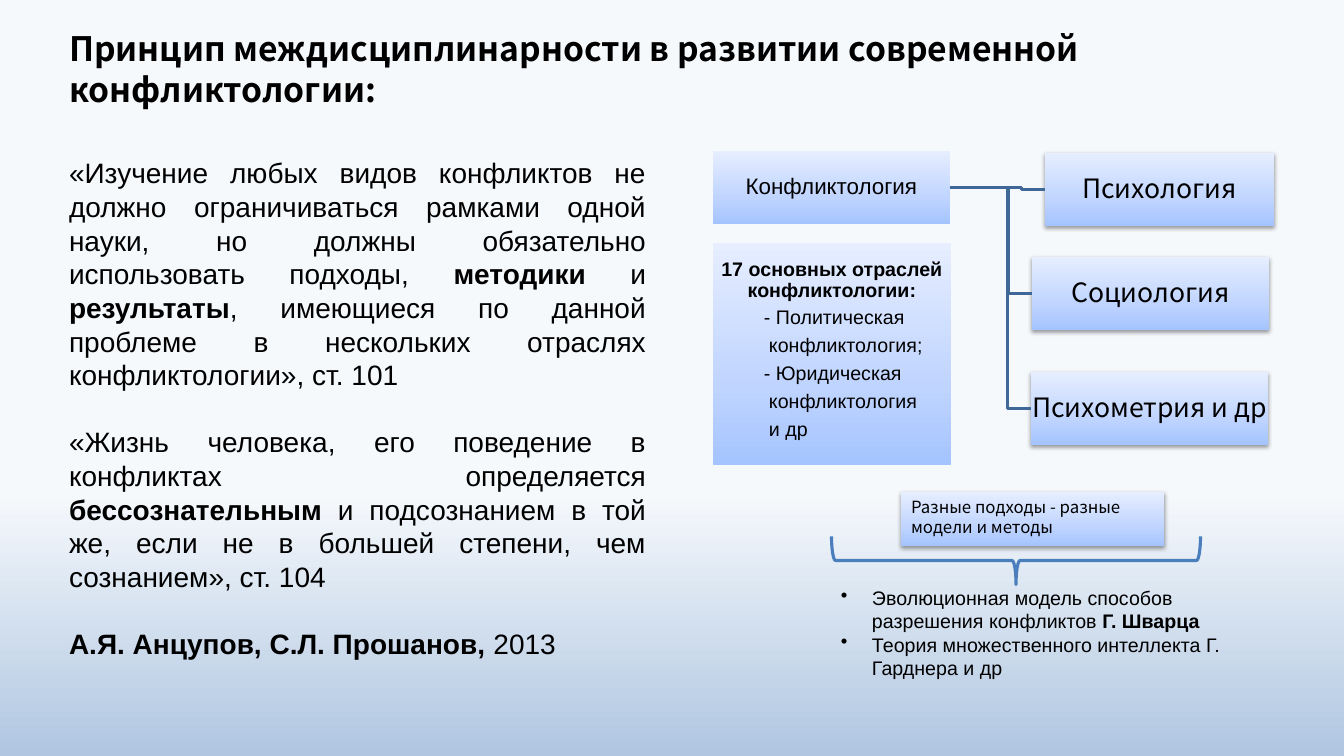
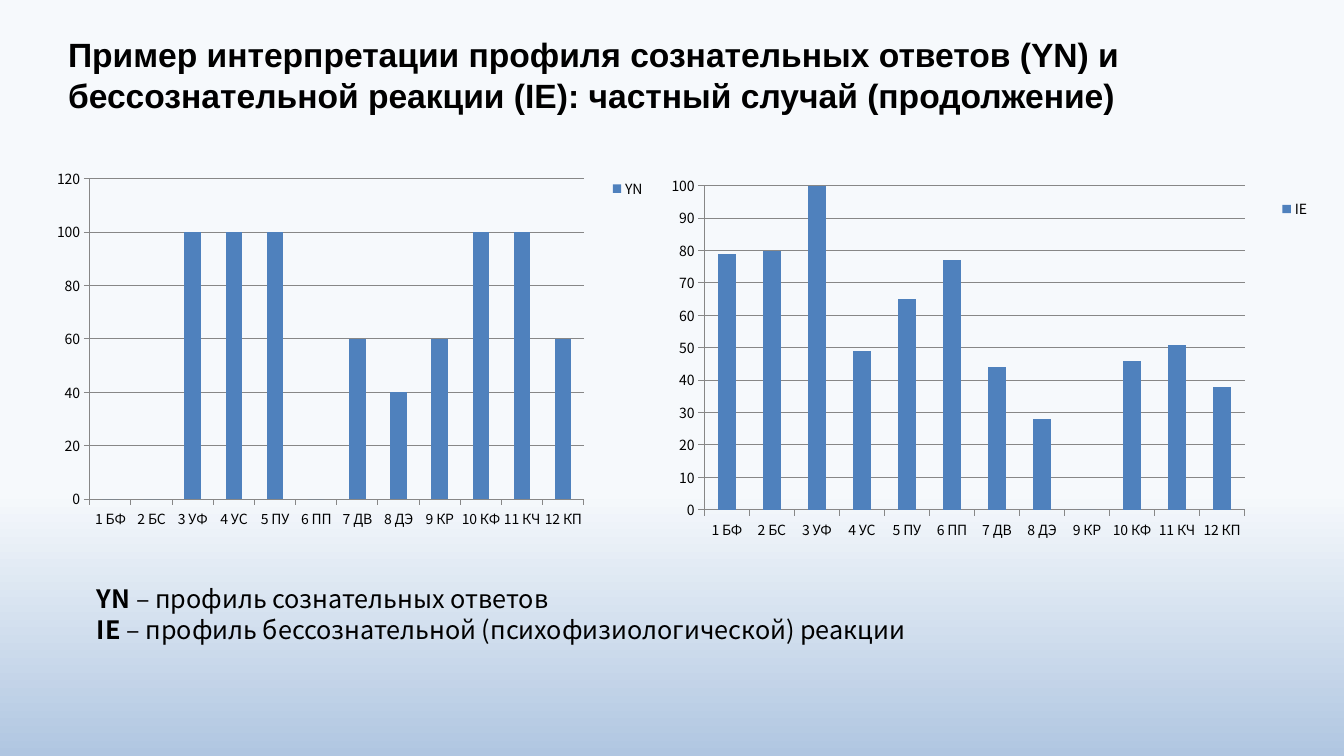
import pptx
import pptx.chart.data
import pptx.dml.color
import pptx.enum.chart
import pptx.enum.shapes
import pptx.enum.text
import pptx.oxml
import pptx.oxml.ns
import pptx.util

ARIAL = "Arial"
NOTO = "Noto Sans CJK KR"
COLORS = {
    "text": "000000", "sky": "F6F9FC", "haze": "B0C6E1",
    "box_dark": "A4C4FF", "box_mid": "BFD4FF", "box_light": "E6EEFF",
    "link": "3F6797", "brace": "4B7EBC", "bar": "4F81BD", "axis": "878787",
}
BACKGROUND_STOPS = [(0, "sky"), (65, "sky"), (100, "haze")]
BOX_STOPS = [(0, "box_dark"), (35, "box_mid"), (100, "box_light")]
SCALES = ["1 БФ", "2 БС", "3 УФ", "4 УС", "5 ПУ", "6 ПП",
          "7 ДВ", "8 ДЭ", "9 КР", "10 КФ", "11 КЧ", "12 КП"]
ALIGN = pptx.enum.text.PP_ALIGN
ANCHOR = pptx.enum.text.MSO_ANCHOR
SHAPE = pptx.enum.shapes.MSO_SHAPE
Pt = pptx.util.Pt


def px(length):
    return pptx.util.Emu(round(length * 914400 / 100.8))


def place(*lengths):
    return [px(length) for length in lengths]


def rgb(name):
    return pptx.dml.color.RGBColor.from_string(COLORS[name])


def xml(markup):
    """Parse one element, declaring the a: and c: namespaces on it."""
    head, gap, tail = markup.partition(" ")
    return pptx.oxml.parse_xml(f"{head} {pptx.oxml.ns.nsdecls('a', 'c')}{gap}{tail}")


def paint_gradient(fill, stops, angle):
    fill.gradient()
    fill.gradient_angle = angle
    stop_list = fill.gradient_stops[0]._gs.getparent()
    for stop in list(stop_list):
        stop_list.remove(stop)
    for position, color in stops:
        stop_list.append(xml(f'<a:gs pos="{position * 1000}">'
                             f'<a:srgbClr val="{COLORS[color]}"/></a:gs>'))


def set_indent(para, left, first):
    props = para._p.get_or_add_pPr()
    props.set("marL", str(px(left)))
    props.set("indent", str(px(first)))
    return props


def write(frame, lines, font, size, pitch, align=ALIGN.LEFT,
          anchor=ANCHOR.TOP, insets=(10, 5, 10, 5)):
    """Fill a frame, one paragraph a line; text between asterisks is bold."""
    frame.word_wrap = True
    frame.auto_size = pptx.enum.text.MSO_AUTO_SIZE.NONE
    frame.vertical_anchor = anchor
    (frame.margin_left, frame.margin_top,
     frame.margin_right, frame.margin_bottom) = place(*insets)
    for index, line in enumerate(lines):
        para = frame.add_paragraph() if index else frame.paragraphs[0]
        para.alignment = align
        para.line_spacing = Pt(pitch)
        para.font.name = font
        para.font.size = Pt(size)
        para.font.color.rgb = rgb("text")
        for number, text in enumerate(line.split("*")):
            if text:
                span = para.add_run()
                span.text = text
                if number % 2:
                    span.font.bold = True
    return frame.paragraphs


def add_titled_page(deck, title, font, left, top):
    page = deck.slides.add_slide(deck.slide_layouts[5])
    holder = page.shapes.title
    holder.left, holder.top, holder.width, holder.height = place(left, top, 1224, 92)
    write(holder.text_frame, [title], font, 24, 29)[0].font.bold = True
    return page


def add_text(page, bounds, lines, font, size, pitch, **options):
    box = page.shapes.add_textbox(*place(*bounds))
    return write(box.text_frame, lines, font, size, pitch, **options)


def add_box(page, bounds, shadow=True):
    box = page.shapes.add_shape(SHAPE.RECTANGLE, *place(*bounds))
    paint_gradient(box.fill, BOX_STOPS, 90)
    box.line.fill.background()
    box.shadow.inherit = False
    if shadow:
        effects = box._element.spPr.find(pptx.oxml.ns.qn("a:effectLst"))
        effects.append(xml(
            f'<a:outerShdw blurRad="{Pt(3.1)}" dist="{Pt(1.6)}" dir="5400000" rotWithShape="0">'
            f'<a:srgbClr val="{COLORS["text"]}"><a:alpha val="38000"/></a:srgbClr>'
            '</a:outerShdw>'))
    return box


def add_labelled_box(page, bounds, label, font, size, pitch, shadow=True):
    box = add_box(page, bounds, shadow)
    write(box.text_frame, [label], font, size, pitch,
          ALIGN.CENTER, ANCHOR.MIDDLE, (1, 1, 1, 1))
    return box


def add_elbow(page, start, end, bend):
    """Join two boxes side to side, turning at bend percent of the way."""
    link = page.shapes.add_connector(pptx.enum.shapes.MSO_CONNECTOR.ELBOW, 0, 0, 0, 0)
    link.begin_connect(start, 3)
    link.end_connect(end, 1)
    link.line.color.rgb = rgb("link")
    link.line.width = Pt(2)
    props = link._element.spPr
    props.append(xml("<a:effectLst />"))
    guides = props.find(pptx.oxml.ns.qn("a:prstGeom")).get_or_add_avLst()
    guides.append(xml(f'<a:gd name="adj1" fmla="val {bend * 1000}"/>'))


def add_brace(page, bounds):
    brace = page.shapes.add_shape(SHAPE.RIGHT_BRACE, *place(*bounds))
    brace.rotation = 90
    brace.fill.background()
    brace.line.color.rgb = rgb("brace")
    brace.line.width = Pt(2.25)
    brace.shadow.inherit = False


def set_layout(element, index, target="", **fractions):
    for old in element.findall(pptx.oxml.ns.qn("c:layout")):
        element.remove(old)
    modes = '<c:xMode val="edge"/><c:yMode val="edge"/>'
    sizes = "".join(f'<c:{key} val="{value}"/>' for key, value in fractions.items())
    element.insert(index, xml(
        f"<c:layout ><c:manualLayout>{target}{modes}{sizes}</c:manualLayout></c:layout>"))


def style_axis(axis):
    axis.format.line.color.rgb = rgb("axis")
    axis.major_tick_mark = pptx.enum.chart.XL_TICK_MARK.OUTSIDE
    axis.minor_tick_mark = pptx.enum.chart.XL_TICK_MARK.NONE


def add_profile_chart(page, bounds, name, values, top, step, plot_area, legend_at):
    data = pptx.chart.data.CategoryChartData(number_format="0")
    data.categories = SCALES
    data.add_series(name, values)
    chart = page.shapes.add_chart(
        pptx.enum.chart.XL_CHART_TYPE.COLUMN_CLUSTERED, *place(*bounds), data).chart
    chart.has_title = False
    chart.font.name = NOTO
    chart.font.size = Pt(10)
    chart.font.color.rgb = rgb("text")

    plot = chart.plots[0]
    plot.gap_width = 150
    plot.vary_by_categories = False
    bars = plot.series[0].format.fill
    bars.solid()
    bars.fore_color.rgb = rgb("bar")

    style_axis(chart.category_axis)
    scale = chart.value_axis
    style_axis(scale)
    scale.minimum_scale, scale.maximum_scale, scale.major_unit = 0, top, step
    scale.has_major_gridlines = True
    scale.major_gridlines.format.line.color.rgb = rgb("axis")

    chart.has_legend = True
    chart.legend.position = pptx.enum.chart.XL_LEGEND_POSITION.RIGHT
    chart.legend.include_in_layout = False
    set_layout(chart.legend._element, 1, **dict(zip("xy", legend_at)))
    set_layout(chart._chartSpace.chart.plotArea, 0,
               '<c:layoutTarget val="inner"/>'
               , **dict(zip("xywh", plot_area)))


def add_branches(page):
    box = add_box(page, (713, 243, 238, 222), shadow=False)
    paras = write(box.text_frame, [
        "*17 основных отраслей конфликтологии:*",
        "- Политическая", "конфликтология;",
        "- Юридическая", "конфликтология", "и др",
    ], ARIAL, 14, 15, insets=(1, 16, 1, 1))
    paras[0].alignment = ALIGN.CENTER
    for para in paras:
        para.space_after = Pt(5)
    for para in paras[1:]:
        set_indent(para, 55, -5 if para.text.startswith("-") else 0)


def build_principle_page(deck):
    page = add_titled_page(
        deck, "Принцип междисциплинарности в развитии современной конфликтологии:",
        NOTO, 59, 23)
    quotes = add_text(page, (59, 151, 597, 519), [
        "«Изучение любых видов конфликтов не должно ограничиваться рамками одной науки, "
        "но должны обязательно использовать подходы, *методики* и *результаты*, имеющиеся "
        "по данной проблеме в нескольких отраслях конфликтологии», ст. 101",
        "«Жизнь человека, его поведение в конфликтах определяется *бессознательным* "
        "и подсознанием в той же, если не в большей степени, чем сознанием», ст. 104",
        "*А.Я. Анцупов, С.Л. Прошанов, *2013",
    ], ARIAL, 20, 24, align=ALIGN.JUSTIFY)
    for para in quotes[1:]:
        para.space_before = Pt(24)

    science = add_labelled_box(page, (713, 151, 237, 73), "Конфликтология",
                               ARIAL, 16, 17, shadow=False)
    for label, left, top, width, bend in [
        ("Психология", 1045, 153, 229, 75),
        ("Социология", 1032, 257, 237, 71),
        ("Психометрия и др", 1031, 372, 237, 71),
    ]:
        field = add_labelled_box(page, (left, top, width, 73), label, NOTO, 19, 20)
        add_elbow(page, science, field, bend)
    add_branches(page)

    add_brace(page, (992, 376, 48, 369))
    models = add_text(page, (831, 581, 436, 132), [
        "Эволюционная модель способов разрешения конфликтов *Г. Шварца*",
        "Теория множественного интеллекта Г. Гарднера и др",
    ], ARIAL, 14, 16.7)
    for para in models:
        props = set_indent(para, 31, -31)
        bullet = xml('<a:buChar char="•"/>')
        props.insert_element_before(bullet, "a:tabLst", "a:defRPr", "a:extLst")
    approaches = add_box(page, (901, 492, 263, 54))
    write(approaches.text_frame, ["Разные подходы - разные модели и методы"],
          NOTO, 12, 14.3)


def build_profile_page(deck):
    page = add_titled_page(
        deck, "Пример интерпретации профиля сознательных ответов (YN) и "
        "бессознательной реакции (IE): частный случай (продолжение)", ARIAL, 58, 29)
    add_profile_chart(page, (41, 149, 610, 427), "YN",
                      [0, 0, 100, 100, 100, 0, 60, 40, 60, 100, 100, 60],
                      120, 20, (0.08, 0.07, 0.81, 0.75), (0.93, 0.06))
    add_profile_chart(page, (651, 158, 667, 463), "IE",
                      [79, 80, 100, 49, 65, 77, 44, 28, 0, 46, 51, 38],
                      100, 10, (0.08, 0.06, 0.81, 0.7), (0.94, 0.08))
    add_text(page, (87, 578, 879, 72), [
        "*YN* – профиль сознательных ответов",
        "*IE* – профиль бессознательной (психофизиологической) реакции",
    ], NOTO, 18, 22)


def main():
    deck = pptx.Presentation()
    deck.slide_width, deck.slide_height = place(1344, 756)
    paint_gradient(deck.slide_master.background.fill, BACKGROUND_STOPS, 270)
    build_principle_page(deck)
    build_profile_page(deck)
    deck.save("out.pptx")


if __name__ == "__main__":
    main()
